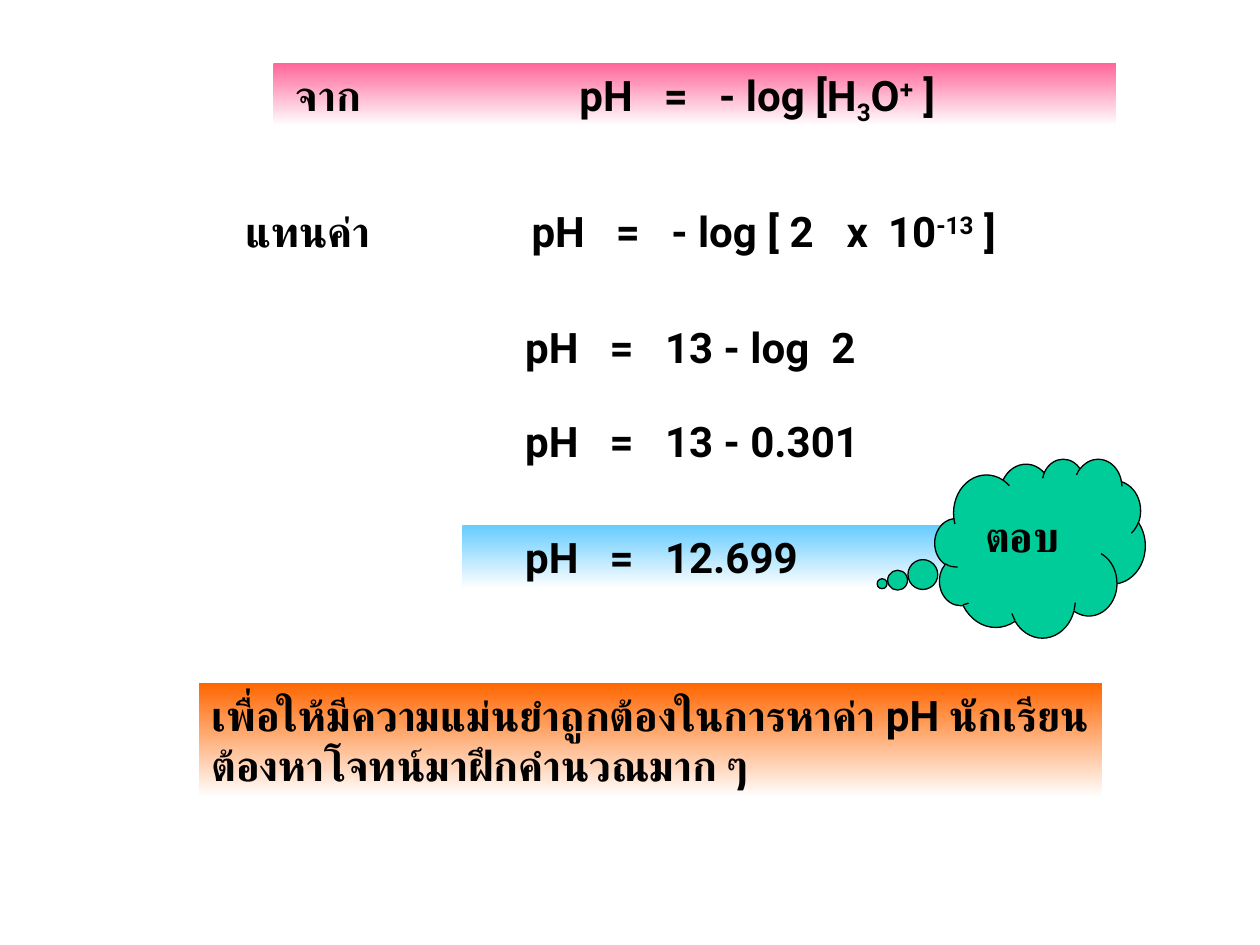
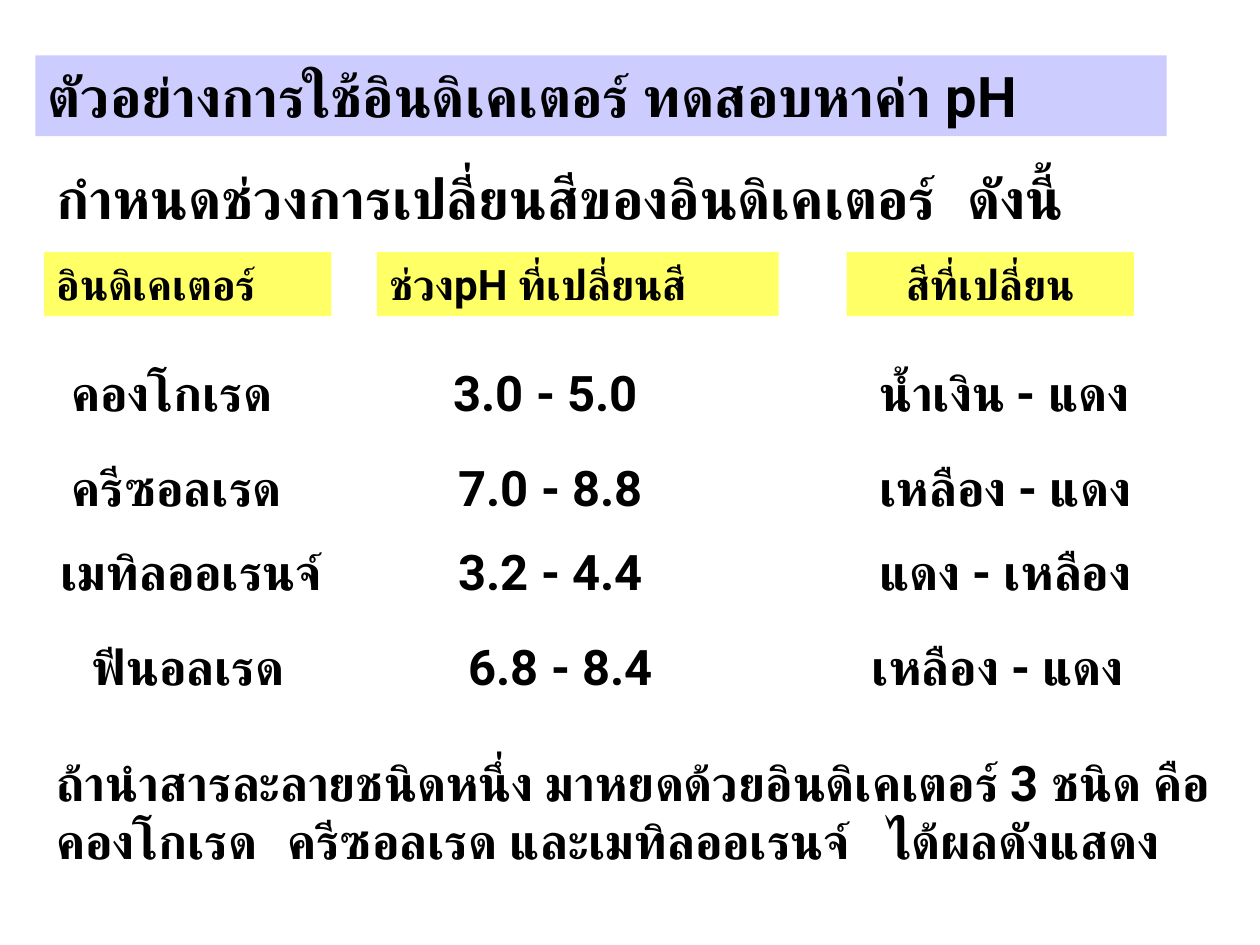
from dataclasses import dataclass
from typing import Optional, Union

from lxml.etree import SubElement
from pptx import Presentation
from pptx.dml.color import RGBColor
from pptx.enum.shapes import MSO_SHAPE
from pptx.enum.text import MSO_ANCHOR, PP_ALIGN
from pptx.oxml.ns import qn
from pptx.util import Inches, Pt

FONT = "Roboto"
COLORS = {
    "text": "000000",
    "white": "FFFFFF",
    "pink": "FF6699",
    "sky": "66CCFF",
    "orange": "FF6600",
    "cloud": "00CC99",
    "title": "CCCCFF",
    "heading": "FFFF66",
}
SUBSCRIPT, SUPERSCRIPT = -25, 30
# Distances from "pH" to the equals sign and to the right-hand side
EQUALS, VALUE = 0.67, 1.11

Spans = Union[str, list[tuple[str, int]]]


@dataclass
class Band:
    """A filled strip behind text; a fading one runs down to white."""
    color: str
    fades: bool = False


@dataclass
class Step:
    """One line of the calculation; ph is where "pH" stands in the line."""
    spans: Spans
    left: float
    top: float
    width: float
    ph: float
    indent: float = 0
    extra_tabs: tuple[float, ...] = ()
    band: Optional[Band] = None


@dataclass
class Indicator:
    name: str
    ph_range: str
    change: str
    top: float
    name_left: float
    range_center: float
    change_left: float = 6.88


def rgb(name: str) -> RGBColor:
    return RGBColor.from_string(COLORS[name])


def paint_band(shape, band: Band) -> None:
    shape.shadow.inherit = False
    shape.line.fill.background()
    if not band.fades:
        shape.fill.solid()
        shape.fill.fore_color.rgb = rgb(band.color)
        return
    shape.fill.gradient()
    shape.fill.gradient_angle = 270
    for stop, color in zip(shape.fill.gradient_stops, (band.color, "white")):
        stop.color.rgb = rgb(color)


def add_text(page, spans: Spans, left: float, top: float, width: float,
             height: float = 0.5, *, size: int = 24, align=PP_ALIGN.LEFT,
             indent: float = 0, tabs: tuple[float, ...] = (),
             band: Optional[Band] = None):
    area = (Inches(left), Inches(top), Inches(width), Inches(height))
    if band:
        box = page.shapes.add_shape(MSO_SHAPE.RECTANGLE, *area)
        paint_band(box, band)
    else:
        box = page.shapes.add_textbox(*area)
    frame = box.text_frame
    frame.word_wrap = True
    frame.vertical_anchor = MSO_ANCHOR.TOP

    para = frame.paragraphs[0]
    para.alignment = align
    properties = para._p.get_or_add_pPr()
    if indent:
        properties.set("marL", str(Inches(indent)))
    if tabs:
        tab_list = SubElement(properties, qn("a:tabLst"))
        for position in tabs:
            SubElement(tab_list, qn("a:tab"),
                       pos=str(Inches(position)), algn="l")

    for text, baseline in [(spans, 0)] if isinstance(spans, str) else spans:
        span = para.add_run()
        span.text = text
        span.font.name = FONT
        span.font.size = Pt(size)
        span.font.bold = True
        span.font.color.rgb = rgb("text")
        span_properties = span._r.get_or_add_rPr()
        SubElement(span_properties, qn("a:cs"), typeface=FONT)
        if baseline:
            span_properties.set("baseline", str(baseline * 1000))
    return box


def add_step(page, step: Step) -> None:
    offsets = (0, EQUALS, VALUE, *step.extra_tabs)
    add_text(page, step.spans, step.left, step.top, step.width,
             indent=step.indent, band=step.band,
             tabs=tuple(step.ph + offset for offset in offsets))


def add_answer_cloud(page) -> None:
    cloud = page.shapes.add_shape(MSO_SHAPE.CLOUD_CALLOUT, Inches(7.42),
                                  Inches(3.64), Inches(1.67), Inches(1.42))
    cloud.adjustments[0] = -0.751
    cloud.adjustments[1] = 0.199
    cloud.shadow.inherit = False
    cloud.fill.solid()
    cloud.fill.fore_color.rgb = rgb("cloud")
    cloud.line.color.rgb = rgb("text")
    cloud.line.width = Pt(0.75)
    add_text(page, "ตอบ", 7.72, 4, 1.5)


STEPS = [
    Step([("จาก\tpH\t=\t- log [H", 0), ("3", SUBSCRIPT), ("O", 0),
          ("+", SUPERSCRIPT), (" ]", 0)],
         2.17, 0.5, 6.69, ph=2.25, indent=0.08, band=Band("pink", True)),
    Step([("แทนค่า\tpH\t=\t- log [ 2\tx\t10", 0), ("-13", SUPERSCRIPT),
          (" ]", 0)],
         1.77, 1.58, 7.32, ph=2.27, indent=0.08, extra_tabs=(2.5, 2.83)),
    Step("\tpH\t=\t13 - log\t2", 3.67, 2.5, 4.72, ph=0.4, extra_tabs=(2.43,)),
    Step("\tpH\t=\t13 - 0.301", 3.67, 3.25, 5.11, ph=0.4),
    Step("\tpH\t=\t12.699", 3.67, 4.17, 4.01, ph=0.4, band=Band("sky", True)),
]

# Heading text, left, width, alignment
HEADINGS = [
    ("อินดิเคเตอร์", 0.35, 2.28, PP_ALIGN.LEFT),
    ("ช่วงpH ที่เปลี่ยนสี", 2.99, 3.19, PP_ALIGN.LEFT),
    ("สีที่เปลี่ยน", 6.72, 2.28, PP_ALIGN.CENTER),
]

INDICATORS = [
    Indicator("คองโกเรด", "3.0 - 5.0", "น้ำเงิน - แดง", 2.83, 0.47, 4.33),
    Indicator("ครีซอลเรด", "7.0 - 8.8", "เหลือง - แดง", 3.58, 0.47, 4.37),
    Indicator("เมทิลออเรนจ์", "3.2 - 4.4", "แดง - เหลือง", 4.25, 0.38, 4.37),
    Indicator("ฟีนอลเรด", "6.8 - 8.4", "เหลือง - แดง", 5, 0.63, 4.45, 6.82),
]


def build_calculation(page) -> None:
    for step in STEPS:
        add_step(page, step)
    add_answer_cloud(page)
    # Closing advice
    add_text(page, "เพื่อให้มีความแม่นยำถูกต้องในการหาค่า pH "
             "นักเรียนต้องหาโจทน์มาฝึกคำนวณมาก ๆ",
             1.58, 5.42, 7.17, 0.91, band=Band("orange", True))


def build_indicators(page) -> None:
    # Title and introduction
    add_text(page, "ตัวอย่างการใช้อินดิเคเตอร์ ทดสอบหาค่า pH",
             0.28, 0.44, 8.98, 0.64, size=32, band=Band("title"))
    add_text(page, "กำหนดช่วงการเปลี่ยนสีของอินดิเคเตอร์\tดังนี้",
             0.35, 1.25, 9.21, 0.64, size=32, tabs=(7.23,))

    # Indicator columns
    for text, left, width, align in HEADINGS:
        add_text(page, text, left, 2, width, 0.51, align=align,
                 band=Band("heading"))
    range_width = 2.4
    for row in INDICATORS:
        add_text(page, row.name, row.name_left, row.top, 2.5, 0.57, size=28)
        add_text(page, row.ph_range, row.range_center - range_width / 2,
                 row.top, range_width, 0.57, size=28, align=PP_ALIGN.CENTER)
        add_text(page, row.change, row.change_left, row.top, 2.6, 0.57,
                 size=28)

    # Test description
    add_text(page, "ถ้านำสารละลายชนิดหนึ่ง มาหยดด้วยอินดิเคเตอร์ 3 ชนิด คือ "
             "คองโกเรด\tครีซอลเรด และเมทิลออเรนจ์\tได้ผลดังแสดง",
             0.35, 5.92, 9.65, 1.51, size=28, tabs=(1.83, 6.6))


def main() -> None:
    deck = Presentation()
    deck.slide_width = Inches(10)
    deck.slide_height = Inches(7.5)
    blank = deck.slide_layouts[6]
    for build in (build_calculation, build_indicators):
        build(deck.slides.add_slide(blank))
    deck.save("out.pptx")


if __name__ == "__main__":
    main()
